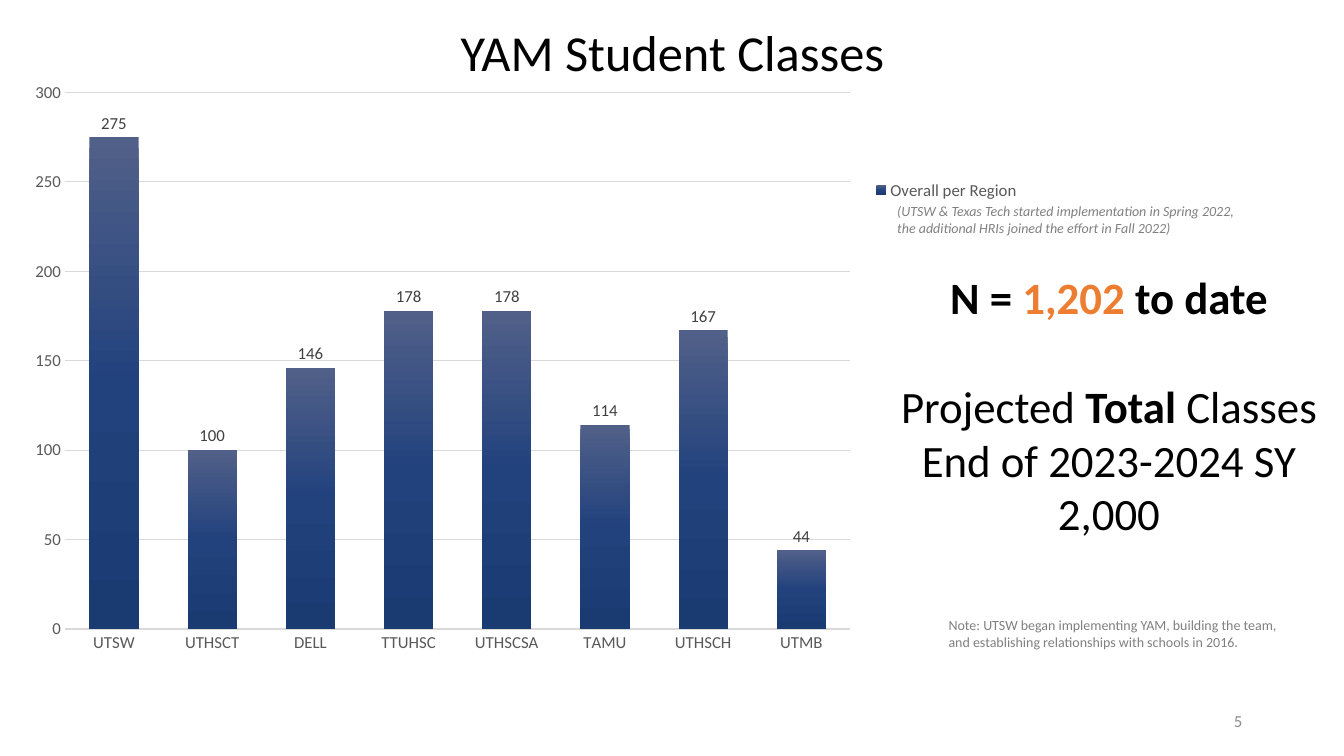
from lxml import etree
from pptx import Presentation
from pptx.chart.data import CategoryChartData
from pptx.dml.color import RGBColor
from pptx.enum import chart as kinds, text as kind
from pptx.oxml import parse_xml
from pptx.oxml.ns import nsdecls, qn
from pptx.util import Inches, Pt

FONT = "Calibri"
COLORS = {"ink": "000000", "accent": "ED7D31", "muted": "808080", "page": "8C8C8C",
          "axis": "595959", "label": "404040", "grid": "D9D9D9"}
SHADES = [(0, "516089"), (50, "22427D"), (100, "1A3A72")]
SERIES = "Overall per Region"
CLASSES = {"UTSW": 275, "UTHSCT": 100, "DELL": 146, "TTUHSC": 178,
           "UTHSCSA": 178, "TAMU": 114, "UTHSCH": 167, "UTMB": 44}
FRAME = (0.13, 0.7, 10.08, 5.9)
PLOT = (0.64, 0.92, 7.79, 5.32)
LEGEND = (8.64, 1.77, 1.5, 0.24)

TITLE = [["YAM Student Classes"]]
TOTALS = [
    [("N = ", "bold"), ("1,202", "bold accent"), (" to date", "bold")],
    ["Projected ", ("Total", "bold"), " Classes"],
    ["End of 2023-2024 SY"],
    ["2,000"],
]
START = [["(UTSW & Texas Tech started implementation in Spring 2022, "
          "the additional HRIs joined the effort in Fall 2022)"]]
NOTE = [["Note: UTSW began implementing YAM, building the team, "
         "and establishing relationships with schools in 2016."]]

deck = Presentation()
deck.slide_width, deck.slide_height = Inches(13.33), Inches(7.5)
slide = deck.slides.add_slide(deck.slide_layouts[6])


def paint(name):
    return RGBColor.from_string(COLORS[name])


def style(font, size, color):
    font.name, font.size = FONT, Pt(size)
    font.color.rgb = paint(color)


def write(lines, box, size, color="ink", align="LEFT", anchor="TOP",
          italic=False, spacing=1.0, gaps=None):
    frame = slide.shapes.add_textbox(*map(Inches, box)).text_frame
    frame.word_wrap = True
    frame.vertical_anchor = kind.MSO_ANCHOR[anchor]
    for i, line in enumerate(lines):
        para = frame.paragraphs[0] if i == 0 else frame.add_paragraph()
        para.alignment = kind.PP_ALIGN[align]
        para.line_spacing = spacing
        if gaps and i in gaps:
            para.space_before = Pt(gaps[i])
        for part in line:
            words, marks = (part, "") if isinstance(part, str) else part
            run = para.add_run()
            run.text = words
            style(run.font, size, "accent" if "accent" in marks else color)
            run.font.bold = "bold" in marks
            run.font.italic = italic


def layout(box, inner=False):
    spans = (FRAME[2], FRAME[3]) * 2
    starts = (FRAME[0], FRAME[1], 0, 0)
    parts = [(key, round((v - s) / span, 3))
             for key, v, s, span in zip("xywh", box, starts, spans)]
    target = '<c:layoutTarget val="inner"/>' if inner else ""
    modes = "".join(f'<c:{key}Mode val="edge"/>' for key in "xy")
    sizes = "".join(f'<c:{key} val="{v}"/>' for key, v in parts)
    return parse_xml(f'<c:layout {nsdecls("c")}><c:manualLayout>'
                     f'{target}{modes}{sizes}</c:manualLayout></c:layout>')


def draw_chart():
    data = CategoryChartData()
    data.categories = list(CLASSES)
    data.add_series(SERIES, list(CLASSES.values()))
    chart = slide.shapes.add_chart(kinds.XL_CHART_TYPE.COLUMN_CLUSTERED,
                                   *map(Inches, FRAME), data).chart
    chart.has_title = False
    style(chart.font, 12, "axis")

    plot = chart.plots[0]
    plot.gap_width, plot.overlap, plot.vary_by_categories = 100, -24, False
    plot.has_data_labels = True
    tags = plot.data_labels
    tags.show_value = True
    tags.position = kinds.XL_LABEL_POSITION.OUTSIDE_END
    style(tags.font, 12, "label")

    fill = plot.series[0].format.fill
    fill.gradient()
    fill.gradient_angle = 270
    stops = plot.series[0].format._element.find(".//" + qn("a:gsLst")) \
        if hasattr(plot.series[0].format, "_element") \
        else plot.series[0]._element.find(".//" + qn("a:gsLst"))
    for stop in list(stops):
        stops.remove(stop)
    for place, shade in SHADES:
        stop = etree.SubElement(stops, qn("a:gs"), pos=str(place * 1000))
        etree.SubElement(stop, qn("a:srgbClr"), val=shade)

    for axis in (chart.category_axis, chart.value_axis):
        axis.major_tick_mark = axis.minor_tick_mark = kinds.XL_TICK_MARK.NONE
        style(axis.tick_labels.font, 12, "axis")
    base, scale = chart.category_axis.format.line, chart.value_axis
    base.color.rgb, base.width = paint("grid"), Pt(1)
    scale.minimum_scale, scale.maximum_scale, scale.major_unit = 0, 300, 50
    scale.format.line.fill.background()
    grid = scale.major_gridlines.format.line
    grid.color.rgb, grid.width = paint("grid"), Pt(0.75)

    chart.has_legend = True
    key = chart.legend
    key.position = kinds.XL_LEGEND_POSITION.RIGHT
    key.include_in_layout = False
    style(key.font, 12, "axis")
    key._element.find(qn("c:legendPos")).addnext(layout(LEGEND))
    area = chart._chartSpace.find(".//" + qn("c:plotArea"))
    for old in area.findall(qn("c:layout")):
        area.remove(old)
    area.insert(0, layout(PLOT, inner=True))


write(TITLE, (0.63, 0.23, 12.08, 0.94), 36, align="CENTER", spacing=0.9)
write([["5"]], (9.42, 6.95, 3, 0.4), 12, "page", "RIGHT", "MIDDLE")
draw_chart()
write(TOTALS, (8.8, 2.63, 4.4, 2.79), 32, align="CENTER", gaps={1: 39})
write(START, (8.8, 1.96, 3.59, 0.44), 10, "muted", italic=True)
write(NOTE, (9.31, 6.07, 3.54, 0.44), 10, "muted")
deck.save("out.pptx")
